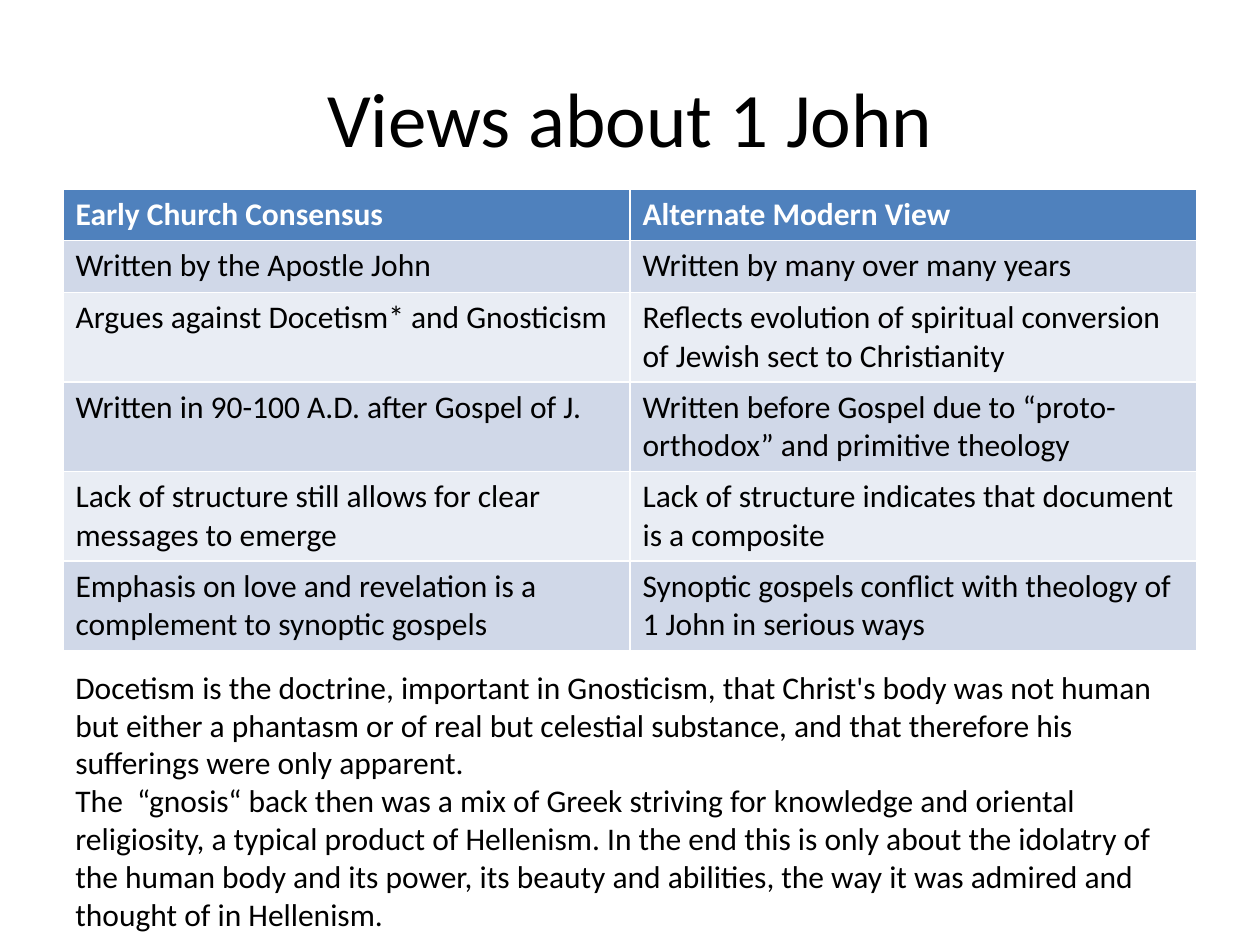
from pptx import Presentation
from pptx.dml.color import RGBColor
from pptx.enum.text import MSO_ANCHOR, MSO_AUTO_SIZE, PP_ALIGN
from pptx.util import Inches, Pt

TITLE = "Views about 1 John"
VIEWS = [
    ("Early Church Consensus", "Alternate Modern View"),
    ("Written by the Apostle John", "Written by many over many years"),
    ("Argues against Docetism* and Gnosticism",
     "Reflects evolution of spiritual conversion of Jewish sect to Christianity"),
    ("Written in 90-100 A.D. after Gospel of J.",
     "Written before Gospel due to “proto-orthodox” and primitive theology"),
    ("Lack of structure still allows for clear messages to emerge",
     "Lack of structure indicates that document is a composite"),
    ("Emphasis on love and revelation is a complement to synoptic gospels",
     "Synoptic gospels conflict with theology of 1 John in serious ways"),
]
NOTES = [
    "Docetism is the doctrine, important in Gnosticism, that Christ's body was not human "
    "but either a phantasm or of real but celestial substance, and that therefore his "
    "sufferings were only apparent.",
    "The  “gnosis“ back then was a mix of Greek striving for knowledge and oriental "
    "religiosity, a typical product of Hellenism. In the end this is only about the "
    "idolatry of the human body and its power, its beauty and abilities, the way it was "
    "admired and thought of in Hellenism.",
]
BLACK, WHITE, HEADER = "000000", "FFFFFF", "4F81BD"
BANDS = ("E9EDF4", "D0D8E8")
MARGIN, ROW_H = 0.5, 0.41


def rgb(value):
    return RGBColor.from_string(value)


def add_run(p, text, size=18, color=BLACK, bold=False):
    r = p.add_run()
    r.text = text
    r.font.name = "Calibri"
    r.font.size = Pt(size)
    r.font.bold = bold
    r.font.color.rgb = rgb(color)


prs = Presentation()
prs.slide_width, prs.slide_height = Inches(10), Inches(7.5)
s = prs.slides.add_slide(prs.slide_layouts[5])
content_w = prs.slide_width - 2 * Inches(MARGIN)

# Title
title = s.shapes.title
title.left, title.top = Inches(MARGIN), Inches(0.3)
title.width, title.height = content_w, Inches(1.25)
title.text_frame.vertical_anchor = MSO_ANCHOR.MIDDLE
p = title.text_frame.paragraphs[0]
p.alignment = PP_ALIGN.CENTER
add_run(p, TITLE, 44)

# Comparison table: its default style draws the white rules
table = s.shapes.add_table(len(VIEWS), len(VIEWS[0]), Inches(MARGIN), Inches(1.5),
                           content_w, Inches(ROW_H * len(VIEWS))).table
for i, row in enumerate(VIEWS):
    head = i == 0
    for j, text in enumerate(row):
        cell = table.cell(i, j)
        cell.fill.solid()
        cell.fill.fore_color.rgb = rgb(HEADER if head else BANDS[i % 2])
        add_run(cell.text_frame.paragraphs[0], text,
                color=WHITE if head else BLACK, bold=head)

# Notes below the table
box = s.shapes.add_textbox(Inches(MARGIN), Inches(5.25), Inches(8.75), Inches(2.52))
tf = box.text_frame
tf.word_wrap = True
tf.auto_size = MSO_AUTO_SIZE.SHAPE_TO_FIT_TEXT
for i, text in enumerate(NOTES):
    p = tf.add_paragraph() if i else tf.paragraphs[0]
    add_run(p, text)

prs.save("out.pptx")
